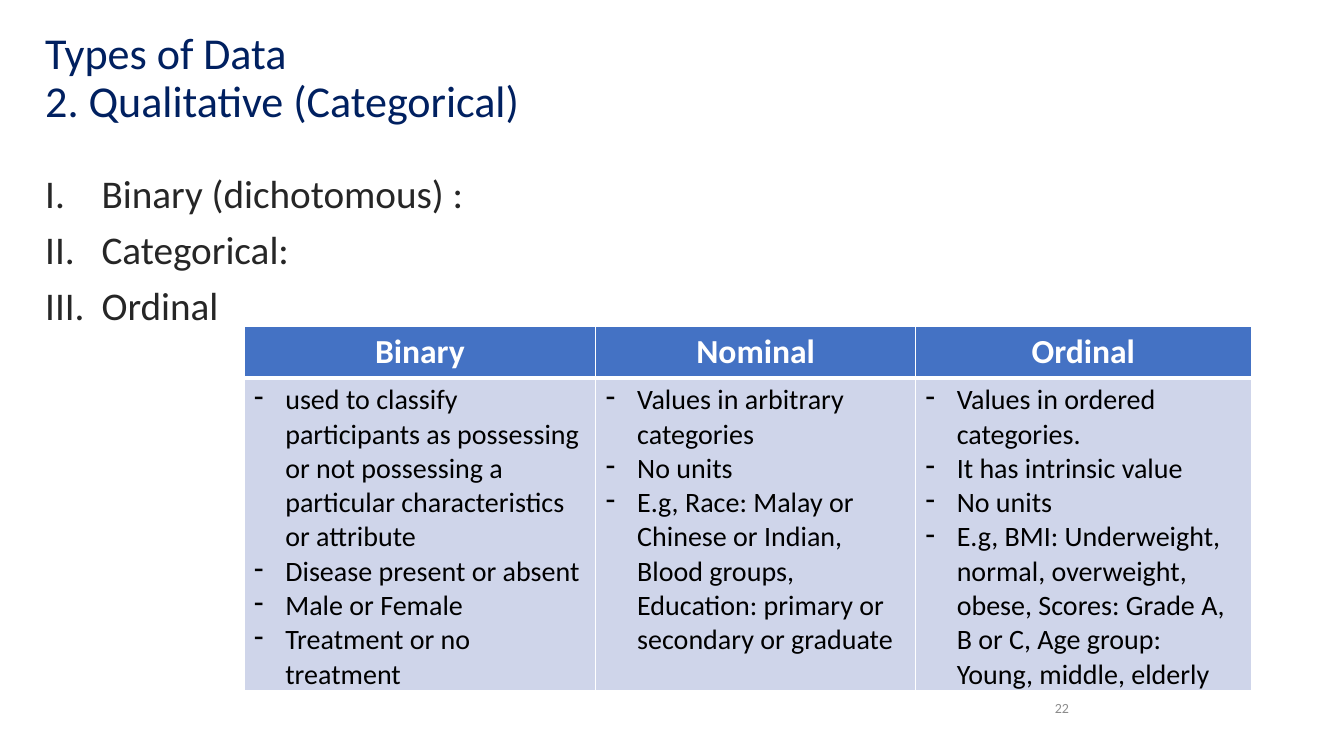
from dataclasses import dataclass

from lxml.etree import SubElement
from pptx import Presentation
from pptx.dml.color import RGBColor
from pptx.enum.text import MSO_ANCHOR, PP_ALIGN
from pptx.oxml.ns import qn
from pptx.slide import Slide
from pptx.table import _Cell
from pptx.text.text import TextFrame, _Paragraph
from pptx.util import Inches, Pt

FONT = "Calibri"
NAVY = RGBColor(0x00, 0x20, 0x60)
CHARCOAL = RGBColor(0x26, 0x26, 0x26)
GRAY = RGBColor(0x8C, 0x8C, 0x8C)
BLACK = RGBColor(0x00, 0x00, 0x00)
WHITE = RGBColor(0xFF, 0xFF, 0xFF)
BLUE = RGBColor(0x44, 0x72, 0xC4)
PALE_BLUE = RGBColor(0xCF, 0xD5, 0xEA)


@dataclass(frozen=True)
class TextStyle:
    size: float
    color: RGBColor
    bold: bool = False


@dataclass(frozen=True)
class DataType:
    name: str
    width: float
    points: tuple[str, ...]


TITLE = TextStyle(31.5, NAVY)
OUTLINE = TextStyle(28, CHARCOAL)
PAGE_NUMBER = TextStyle(10, GRAY)
HEADING = TextStyle(24, WHITE, True)
POINT = TextStyle(20, BLACK)

TITLE_LINES = ("Types of Data", "2. Qualitative (Categorical)")
OUTLINE_ITEMS = ("Binary (dichotomous) :", "Categorical:", "Ordinal")
DATA_TYPES = (
    DataType("Binary", 3.49, (
        "used to classify participants as possessing or not possessing "
        "a particular characteristics or attribute",
        "Disease present or absent",
        "Male or Female",
        "Treatment or no treatment",
    )),
    DataType("Nominal", 3.17, (
        "Values in arbitrary categories",
        "No units",
        "E.g, Race: Malay or Chinese or Indian, Blood groups, "
        "Education: primary or secondary or graduate",
    )),
    DataType("Ordinal", 3.33, (
        "Values in ordered categories.",
        "It has intrinsic value",
        "No units",
        "E.g, BMI: Underweight, normal, overweight, obese, "
        "Scores: Grade A, B or C, Age group: Young, middle, elderly",
    )),
)
ROW_HEIGHTS = (0.51, 3.1)


def add_text(paragraph: _Paragraph, text: str, style: TextStyle) -> None:
    run = paragraph.add_run()
    run.text = text
    run.font.name = FONT
    run.font.size = Pt(style.size)
    run.font.bold = style.bold
    run.font.color.rgb = style.color


def add_frame(slide: Slide, left: float, top: float, width: float,
              height: float, anchor: MSO_ANCHOR) -> TextFrame:
    frame = slide.shapes.add_textbox(
        Inches(left), Inches(top), Inches(width), Inches(height)).text_frame
    frame.word_wrap = True
    frame.vertical_anchor = anchor
    return frame


def add_list(frame: TextFrame, items: tuple[str, ...], style: TextStyle, indent: float,
             bullet: str, marker: dict[str, str], spacing: float = 1, gap: float = 0) -> None:
    for index, item in enumerate(items):
        paragraph = frame.add_paragraph() if index else frame.paragraphs[0]
        paragraph.line_spacing = spacing
        if index:
            paragraph.space_before = Pt(gap)
        properties = paragraph._p.get_or_add_pPr()
        properties.set("marL", str(Inches(indent)))
        properties.set("indent", str(-Inches(indent)))
        SubElement(properties, qn(bullet), marker)
        add_text(paragraph, item, style)


def format_cell(cell: _Cell, fill: RGBColor, bottom_border: float) -> None:
    properties = cell._tc.get_or_add_tcPr()
    borders = {"a:lnL": 1, "a:lnR": 1, "a:lnT": 1, "a:lnB": bottom_border}
    for side, width in borders.items():
        line = SubElement(properties, qn(side), {"w": str(Pt(width))})
        SubElement(SubElement(line, qn("a:solidFill")), qn("a:srgbClr"), {"val": str(WHITE)})
    cell.fill.solid()
    cell.fill.fore_color.rgb = fill


def add_data_types(slide: Slide) -> None:
    table = slide.shapes.add_table(
        len(ROW_HEIGHTS), len(DATA_TYPES), Inches(2.42), Inches(3.24),
        Inches(sum(data_type.width for data_type in DATA_TYPES)),
        Inches(sum(ROW_HEIGHTS))).table
    for row, height in zip(table.rows, ROW_HEIGHTS):
        row.height = Inches(height)
    for column, data_type in enumerate(DATA_TYPES):
        table.columns[column].width = Inches(data_type.width)
        heading = table.cell(0, column)
        format_cell(heading, BLUE, 3)
        heading_paragraph = heading.text_frame.paragraphs[0]
        heading_paragraph.alignment = PP_ALIGN.CENTER
        add_text(heading_paragraph, data_type.name, HEADING)
        details = table.cell(1, column)
        format_cell(details, PALE_BLUE, 1)
        add_list(details.text_frame, data_type.points, POINT, 0.31,
                 "a:buChar", {"char": "-"})


def main() -> None:
    presentation = Presentation()
    presentation.slide_width = Inches(13.33)
    presentation.slide_height = Inches(7.5)
    slide = presentation.slides.add_slide(presentation.slide_layouts[6])

    title = add_frame(slide, 0.35, 0.22, 9.41, 1.13, MSO_ANCHOR.MIDDLE).paragraphs[0]
    title.line_spacing = 0.9
    for index, line in enumerate(TITLE_LINES):
        if index:
            title.add_line_break()
        add_text(title, line, TITLE)

    outline = add_frame(slide, 0.35, 1.68, 12.07, 5.04, MSO_ANCHOR.TOP)
    add_list(outline, OUTLINE_ITEMS, OUTLINE, 0.56,
             "a:buAutoNum", {"type": "romanUcPeriod"}, 0.9, 10)

    page_number = add_frame(slide, 8.85, 6.86, 1.85, 0.32, MSO_ANCHOR.MIDDLE).paragraphs[0]
    page_number.alignment = PP_ALIGN.RIGHT
    add_text(page_number, "22", PAGE_NUMBER)

    add_data_types(slide)
    presentation.save("out.pptx")


if __name__ == "__main__":
    main()
